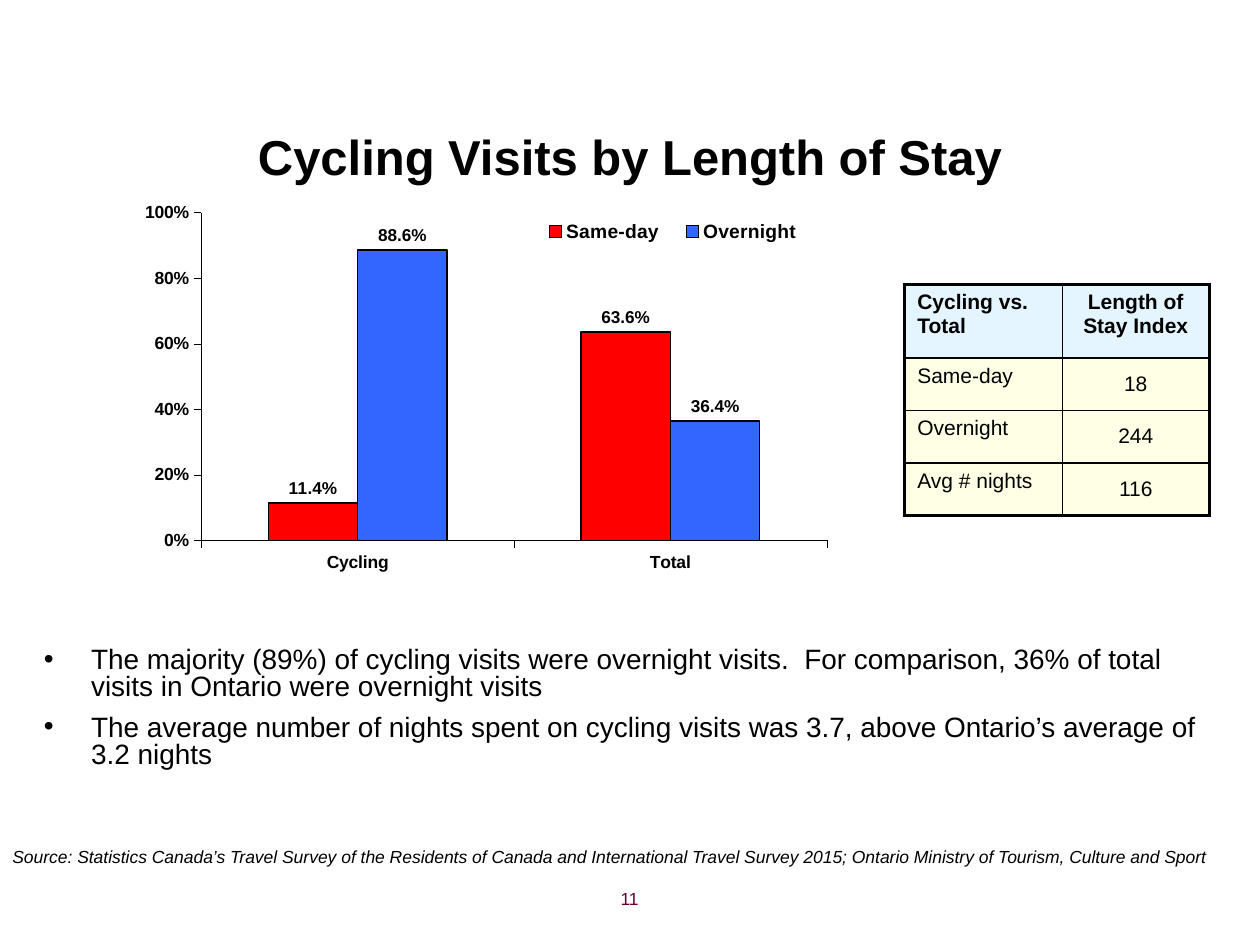
from lxml.etree import SubElement
from pptx import Presentation
from pptx.chart.data import CategoryChartData
from pptx.dml.color import RGBColor
from pptx.enum.chart import XL_CHART_TYPE, XL_LABEL_POSITION, XL_LEGEND_POSITION, XL_TICK_MARK
from pptx.enum.text import MSO_ANCHOR, PP_ALIGN
from pptx.oxml import parse_xml
from pptx.oxml.ns import nsdecls, qn
from pptx.util import Pt


def style(font, size, color="000000", bold=False, italic=False):
    font.name = "Arial"
    font.size = Pt(size)
    font.bold = bold
    font.italic = italic
    font.color.rgb = RGBColor.from_string(color)


def make_layout(x, y, width, height, target=""):
    return parse_xml(
        f'<c:layout {nsdecls("c")}><c:manualLayout>{target}'
        '<c:xMode val="edge"/><c:yMode val="edge"/>'
        f'<c:x val="{x}"/><c:y val="{y}"/><c:w val="{width}"/><c:h val="{height}"/>'
        '</c:manualLayout></c:layout>'
    )


presentation = Presentation()
presentation.slide_width = Pt(720)
presentation.slide_height = Pt(540)
slide = presentation.slides.add_slide(presentation.slide_layouts[6])

text_boxes = [
    ((36, 62, 648, 54), "Cycling Visits by Length of Stay", 28, "000000", True, False,
     PP_ALIGN.CENTER, MSO_ANCHOR.MIDDLE),
    ((0, 480, 705.6, 19.4),
     "Source: Statistics Canada’s Travel Survey of the Residents of Canada and International "
     "Travel Survey 2015; Ontario Ministry of Tourism, Culture and Sport",
     10, "000000", False, True, PP_ALIGN.LEFT, MSO_ANCHOR.TOP),
    ((204, 504, 168, 25), "11", 10, "660033", False, False, PP_ALIGN.RIGHT, MSO_ANCHOR.TOP),
]
for bounds, text, size, color, bold, italic, alignment, anchor in text_boxes:
    frame = slide.shapes.add_textbox(*map(Pt, bounds)).text_frame
    frame.word_wrap = True
    frame.vertical_anchor = anchor
    paragraph = frame.paragraphs[0]
    paragraph.text = text
    paragraph.alignment = alignment
    style(paragraph.font, size, color, bold, italic)

findings = [
    "The majority (89%) of cycling visits were overnight visits.  For comparison, "
    "36% of total visits in Ontario were overnight visits",
    "The average number of nights spent on cycling visits was 3.7, above Ontario’s "
    "average of 3.2 nights",
]
frame = slide.shapes.add_textbox(Pt(18), Pt(367), Pt(684), Pt(120)).text_frame
frame.word_wrap = True
for index, text in enumerate(findings):
    paragraph = frame.add_paragraph() if index else frame.paragraphs[0]
    paragraph.text = text
    paragraph.line_spacing = 0.8
    if index:
        paragraph.space_before = Pt(8)
    properties = paragraph._p.get_or_add_pPr()
    properties.set("marL", str(Pt(27)))
    properties.set("indent", str(-Pt(27)))
    SubElement(properties, qn("a:buFont"), typeface="Arial")
    SubElement(properties, qn("a:buChar"), char="•")
    style(paragraph.font, 16)

chart_data = CategoryChartData(number_format="0.0%")
chart_data.categories = ["Cycling", "Total"]
chart_data.add_series("Same-day", [0.114, 0.636])
chart_data.add_series("Overnight", [0.886, 0.364])
chart = slide.shapes.add_chart(
    XL_CHART_TYPE.COLUMN_CLUSTERED, Pt(60), Pt(108), Pt(550), Pt(271.5), chart_data
).chart
style(chart.font, 10, bold=True)
chart.has_title = False
chart.has_legend = True
chart.legend.position = XL_LEGEND_POSITION.RIGHT
chart.legend.include_in_layout = False
style(chart.legend.font, 11, bold=True)
chart.legend._element.find(qn("c:legendPos")).addnext(make_layout(0.44, 0.05, 0.3, 0.08))

plot_area = chart._chartSpace.chart.plotArea
for previous_layout in plot_area.findall(qn("c:layout")):
    plot_area.remove(previous_layout)
plot_area.insert(0, make_layout(0.1, 0.05, 0.65, 0.69, '<c:layoutTarget val="inner"/>'))

for axis in (chart.category_axis, chart.value_axis):
    axis.has_major_gridlines = False
    axis.major_tick_mark = XL_TICK_MARK.OUTSIDE
    axis.format.line.width = Pt(0.19)
    axis.format.line.color.rgb = RGBColor.from_string("000000")
    style(axis.tick_labels.font, 10, bold=True)
chart.value_axis.minimum_scale = 0
chart.value_axis.maximum_scale = 1
chart.value_axis.major_unit = 0.2
chart.value_axis.tick_labels.number_format = "0%"
chart.value_axis.tick_labels.number_format_is_linked = False

plot = chart.plots[0]
plot.gap_width = 150
plot.overlap = 0
plot.vary_by_categories = False
for series, color in zip(plot.series, ("FF0000", "3366FF")):
    series.format.fill.solid()
    series.format.fill.fore_color.rgb = RGBColor.from_string(color)
    series.format.line.width = Pt(0.75)
    series.format.line.color.rgb = RGBColor.from_string("000000")
    labels = series.data_labels
    labels.show_value = True
    labels.number_format = "0.0%"
    labels.number_format_is_linked = False
    labels.position = XL_LABEL_POSITION.OUTSIDE_END
    style(labels.font, 9.8, bold=True)

rows = [
    ("Cycling vs. Total", "Length of Stay Index"),
    ("Same-day", "18"),
    ("Overnight", "244"),
    ("Avg # nights", "116"),
]
table = slide.shapes.add_table(4, 2, Pt(517), Pt(162.5), Pt(174), Pt(132)).table
for column, width in zip(table.columns, (90, 84)):
    column.width = Pt(width)
for row, height in zip(table.rows, (42, 30, 30, 30)):
    row.height = Pt(height)
for row_index, texts in enumerate(rows):
    for column_index, text in enumerate(texts):
        cell = table.cell(row_index, column_index)
        cell.text = text
        paragraph = cell.text_frame.paragraphs[0]
        style(paragraph.font, 12, bold=row_index == 0)
        if column_index:
            paragraph.alignment = PP_ALIGN.CENTER
        if column_index and row_index:
            cell.vertical_anchor = MSO_ANCHOR.MIDDLE
            cell.margin_left = cell.margin_right = cell.margin_top = cell.margin_bottom = 0
        properties = cell._tc.get_or_add_tcPr()
        outer_edges = {
            "L": column_index == 0,
            "R": column_index == 1,
            "T": row_index == 0,
            "B": row_index == len(rows) - 1,
        }
        for side, is_outer in outer_edges.items():
            line = SubElement(properties, qn(f"a:ln{side}"), w=str(Pt(2.25 if is_outer else 1)))
            SubElement(SubElement(line, qn("a:solidFill")), qn("a:srgbClr"), val="000000")
        cell.fill.solid()
        cell.fill.fore_color.rgb = RGBColor.from_string("FFFFCC" if row_index else "CCECFF")
        fill_color = properties.find(qn("a:solidFill")).find(qn("a:srgbClr"))
        SubElement(fill_color, qn("a:alpha"), val="50000")

presentation.save("out.pptx")
